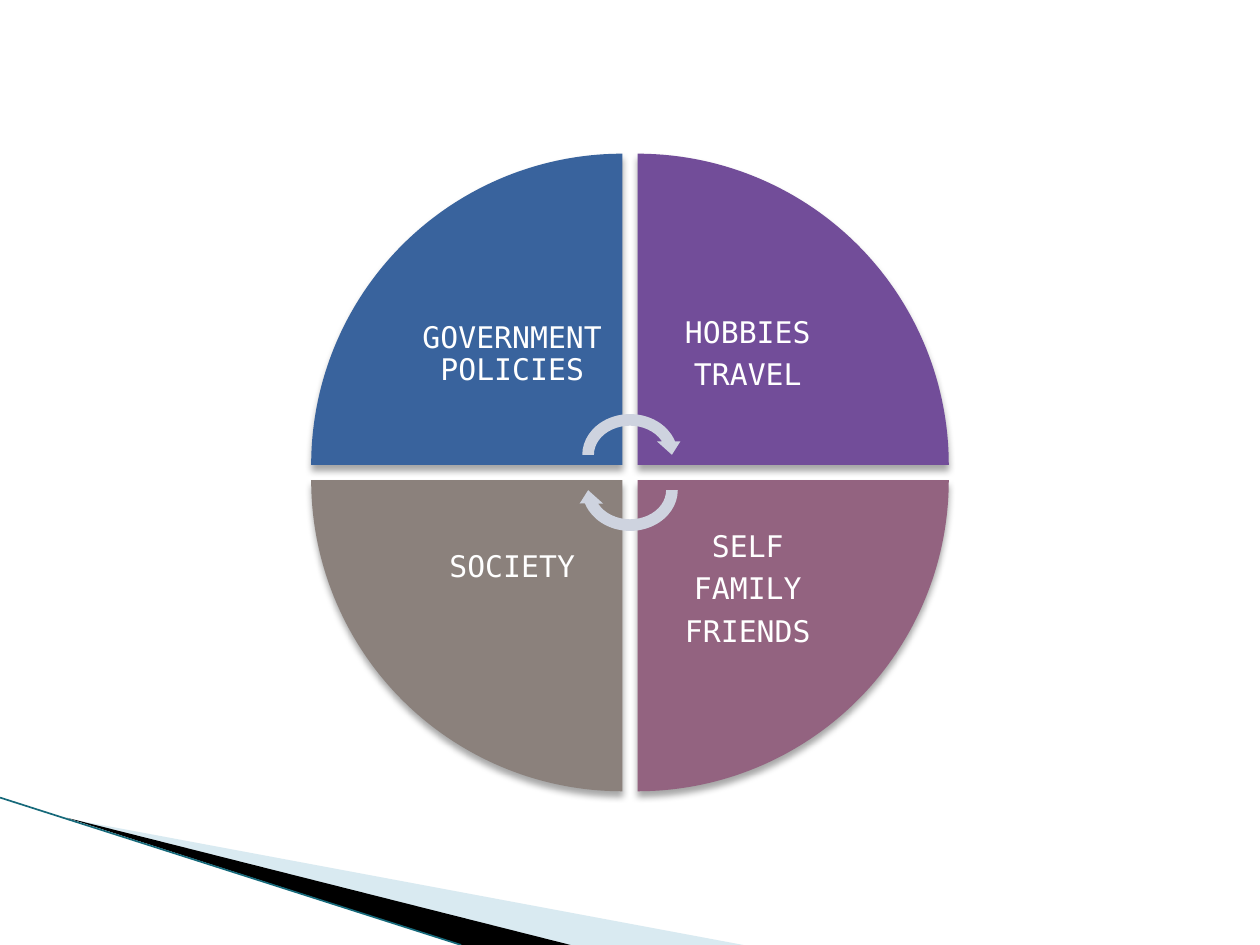
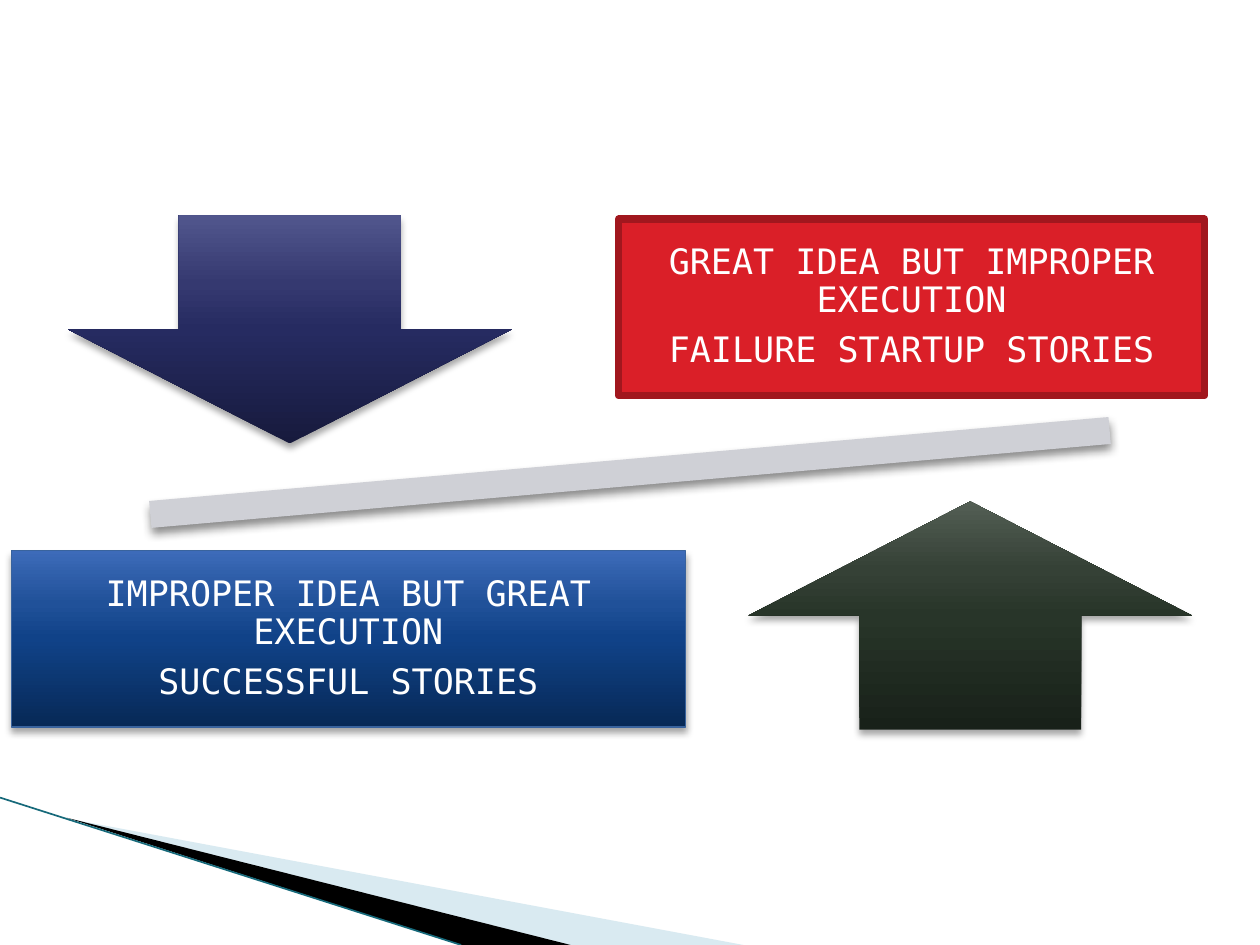
import pptx
import pptx.util
import pptx.dml.color
import pptx.enum.shapes
import pptx.enum.text
import pptx.oxml
import pptx.oxml.ns

SHAPE = pptx.enum.shapes.MSO_SHAPE
Inches, Pt = pptx.util.Inches, pptx.util.Pt
qn = pptx.oxml.ns.qn
WIDTH, HEIGHT = 10, 7.5
FONT = "DejaVu Sans Mono"

COLORS = {
    "white": "FFFFFF", "black": "000000", "pale": "A0CBDC", "teal": "16697A",
    "blue": "39639D", "purple": "724D99", "plum": "936380", "taupe": "8B817C",
    "cycle": "CED3DF", "beam": "CFD0D6", "red": "DA1F28", "dark red": "A1171E",
}
GRADIENT_STOPS = (0, 50, 70, 100)
GRADIENTS = {  # from bottom to top
    "navy": ("171A3D", "262B61", "353970", "51568D"),
    "forest": ("182119", "283529", "354136", "535E54"),
    "royal": ("072956", "104288", "205199", "3D6BB9"),
}

# Content: column, row, rotation, colour, lines, extra inset below the text
QUADRANTS = [
    (0, 0, 0, "blue", ["GOVERNMENT POLICIES"], 0),
    (1, 0, 90, "purple", ["HOBBIES", "TRAVEL"], 0),
    (1, 1, 180, "plum", ["SELF", "FAMILY", "FRIENDS"], 0),
    (0, 1, 270, "taupe", ["SOCIETY"], 0.35),
]
FAILURE = ["GREAT IDEA BUT IMPROPER EXECUTION", "FAILURE STARTUP STORIES"]
SUCCESS = ["IMPROPER IDEA BUT GREAT EXECUTION", "SUCCESSFUL STORIES"]

# Corner decoration, in inches
PALE_WEDGE = [(0.55, 6.5), (5.9, HEIGHT), (4.52, HEIGHT)]
BLACK_WEDGE = [(0.53, 6.49), (4.53, HEIGHT), (3.66, HEIGHT)]
EDGE = [(0, 6.33), (3.66, HEIGHT)]


def rgb(name):
    return pptx.dml.color.RGBColor.from_string(COLORS[name])


def set_fill(shape, name):
    if name not in GRADIENTS:
        shape.fill.solid()
        shape.fill.fore_color.rgb = rgb(name)
        return
    shape.fill.gradient()
    shape.fill.gradient_angle = 90
    stops = shape._element.spPr.find(qn("a:gradFill")).find(qn("a:gsLst"))
    for stop in list(stops):
        stops.remove(stop)
    for position, color in zip(GRADIENT_STOPS, GRADIENTS[name]):
        stops.append(pptx.oxml.parse_xml(
            f'<a:gs {pptx.oxml.ns.nsdecls("a")} pos="{position * 1000}">'
            f'<a:srgbClr val="{color}"/></a:gs>'))


def set_shadow(shape, opacity, blur, distance):
    effects = shape._element.spPr.find(qn("a:effectLst"))
    effects.append(pptx.oxml.parse_xml(
        f'<a:outerShdw {pptx.oxml.ns.nsdecls("a")} blurRad="{Pt(blur)}" '
        f'dist="{Pt(distance)}" dir="5400000" rotWithShape="0">'
        f'<a:srgbClr val="{COLORS["black"]}"><a:alpha val="{opacity * 1000}"/>'
        '</a:srgbClr></a:outerShdw>'))


def add_part(page, kind, place, color, rotation=0, shadow=(35, 4, 3)):
    shape = page.shapes.add_shape(kind, *map(Inches, place))
    shape.rotation = rotation
    shape.shadow.inherit = False
    set_fill(shape, color)
    shape.line.fill.background()
    if shadow:
        set_shadow(shape, *shadow)
    return shape


def outline(shape, color, width):
    shape.line.color.rgb = rgb(color)
    shape.line.width = Pt(width)


def write(box, lines, size, inset, extra_below=0):
    frame = box.text_frame
    frame.word_wrap = True
    frame.vertical_anchor = pptx.enum.text.MSO_ANCHOR.MIDDLE
    frame.margin_left = frame.margin_right = frame.margin_top = Inches(inset)
    frame.margin_bottom = Inches(inset + extra_below)
    for index, line in enumerate(lines):
        para = frame.paragraphs[0] if index == 0 else frame.add_paragraph()
        para.alignment = pptx.enum.text.PP_ALIGN.CENTER
        para.line_spacing = 0.9
        para.space_after = Pt(size * 0.35)
        span = para.add_run()
        span.text = line
        span.font.name = FONT
        span.font.size = Pt(size)
        span.font.color.rgb = rgb("white")


def add_wedge(page, points, color):
    start, *others = [(Inches(x), Inches(y)) for x, y in points]
    builder = page.shapes.build_freeform(*start)
    builder.add_line_segments(others, close=True)
    wedge = builder.convert_to_shape()
    wedge.shadow.inherit = False
    set_fill(wedge, color)
    wedge.line.fill.background()
    return wedge


def decorate_layout(layout, page):
    """Draw the corner on a page, then move it to the layout both pages share."""
    pale = add_wedge(page, PALE_WEDGE, "pale")
    color = pale._element.spPr.find(qn("a:solidFill"))[0]
    color.append(pptx.oxml.parse_xml(
        f'<a:alpha {pptx.oxml.ns.nsdecls("a")} val="40000"/>'))
    black = add_wedge(page, BLACK_WEDGE, "black")
    edge = page.shapes.add_connector(
        pptx.enum.shapes.MSO_CONNECTOR.STRAIGHT,
        *[Inches(value) for point in EDGE for value in point])
    outline(edge, "teal", 0.95)
    edge._element.spPr.append(pptx.oxml.parse_xml(
        f'<a:effectLst {pptx.oxml.ns.nsdecls("a")}/>'))
    for number, part in enumerate((pale, black, edge), start=101):
        part._element.xpath(".//p:cNvPr")[0].set("id", str(number))
        layout.shapes._spTree.append(part._element)


def build_cycle(page):
    middle_x, middle_y = WIDTH / 2, HEIGHT / 2
    radius, half_gap, text_side = 2.47, 0.06, 1.75

    def quadrant(column, row, side):
        left = middle_x + (half_gap if column else -half_gap - side)
        top = middle_y + (half_gap if row else -half_gap - side)
        return left, top, side, side

    for column, row, rotation, color, lines, extra in QUADRANTS:
        add_part(page, SHAPE.PIE_WEDGE, quadrant(column, row, radius),
                 color, rotation)
        box = page.shapes.add_textbox(
            *map(Inches, quadrant(column, row, text_side)))
        write(box, lines, 17, 0.13, extra)

    # Turning arrows in the middle
    width, height, shift = 0.85, 0.74, 0.14
    for rotation, offset in ((0, -shift), (180, shift)):
        place = (middle_x - width / 2, middle_y + offset - height / 2,
                 width, height)
        add_part(page, SHAPE.CIRCULAR_ARROW, place, "cycle", rotation, None)


def build_balance(page):
    # Tilted beam
    beam_width, beam_height = 10.4, 0.91
    add_part(page, SHAPE.MATH_MINUS,
             ((WIDTH - beam_width) / 2, (HEIGHT - beam_height) / 2,
              beam_width, beam_height), "beam", 355, (45, 5, 3))

    # Arrows mirrored about the middle of the page
    width, height, left, top = 3.52, 1.81, 0.54, 1.71
    add_part(page, SHAPE.DOWN_ARROW, (left, top, width, height), "navy")
    add_part(page, SHAPE.UP_ARROW,
             (WIDTH - left - width, HEIGHT - top - height, width, height),
             "forest")

    # Outcome panels
    failure = add_part(page, SHAPE.RECTANGLE, (4.91, 1.74, 4.65, 1.4),
                       "red", shadow=None)
    outline(failure, "dark red", 4.33)
    write(failure, FAILURE, 20, 0.16)
    success = add_part(page, SHAPE.RECTANGLE, (0.09, 4.37, 5.35, 1.4), "royal")
    outline(success, "blue", 0.75)
    write(success, SUCCESS, 20, 0.16)


def main():
    deck = pptx.Presentation()
    deck.slide_width, deck.slide_height = Inches(WIDTH), Inches(HEIGHT)
    layout = deck.slide_layouts[6]
    cycle_page, balance_page = [deck.slides.add_slide(layout) for _ in range(2)]
    decorate_layout(layout, cycle_page)
    build_cycle(cycle_page)
    build_balance(balance_page)
    deck.save("out.pptx")


if __name__ == "__main__":
    main()
